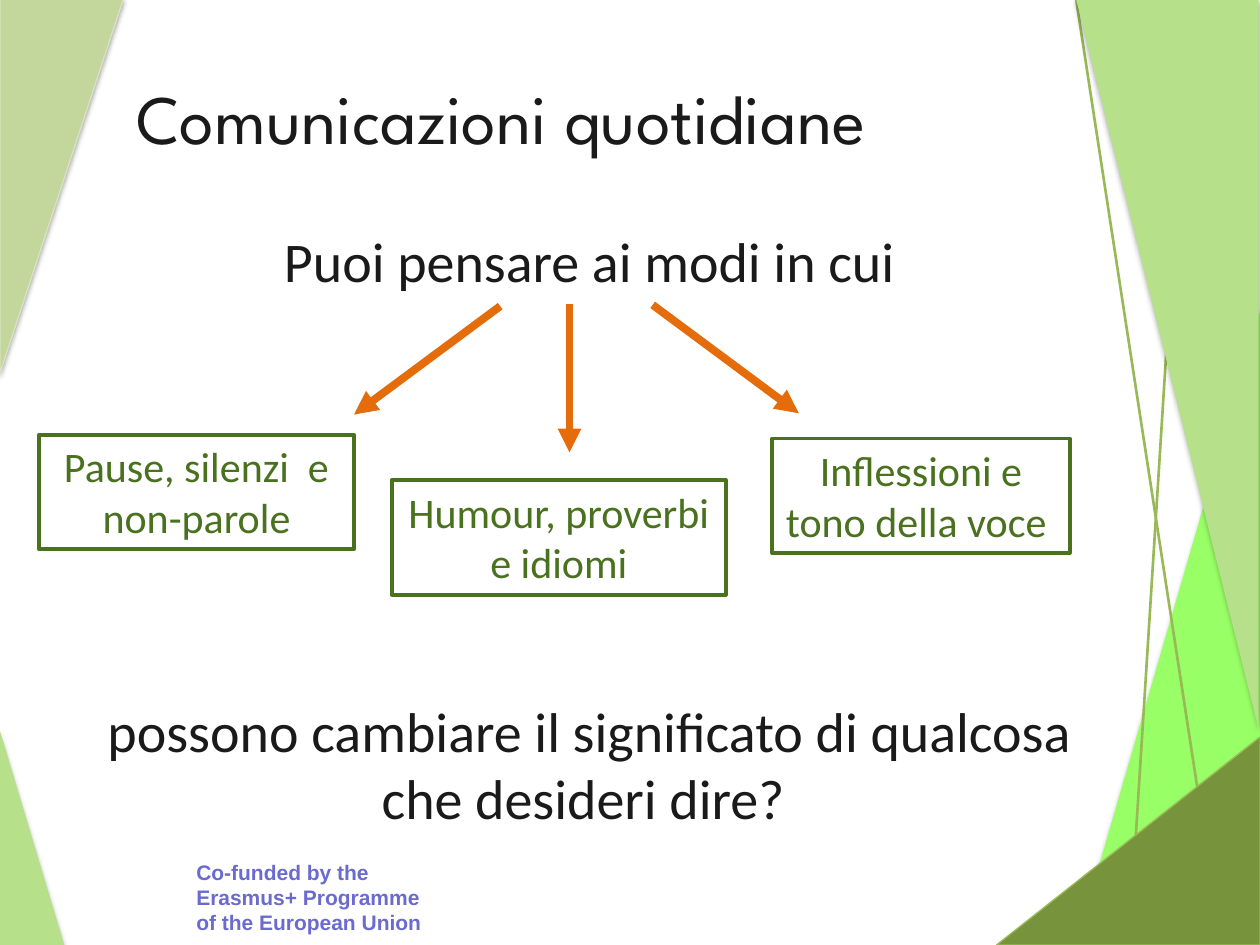
from lxml.etree import SubElement as Sub
from pptx import Presentation
from pptx.dml.color import RGBColor as RGB
from pptx.enum.shapes import MSO_CONNECTOR as Conn, MSO_SHAPE as Shape
from pptx.enum.text import MSO_ANCHOR as Anchor, PP_ALIGN as Align
from pptx.oxml.ns import qn
from pptx.util import Inches, Pt

WIDE, HIGH = 10, 7.5
HUES = {"ink": "1A1A1A", "moss": "49711E", "rust": "E46C0A", "lilac": "6B6BCF",
        "neon": "99FF66", "leaf": "B7E08B", "sage": "C3D69B", "pale": "D7E4BD",
        "olive": "77933C", "stem": "98B955"}

# Content: text, place (left, top, width, height)
TITLE = "Comunicazioni quotidiane", (0.74, 0.3, 6.47, 1.25)
BODY = ["Puoi pensare ai modi in cui",
        "possono cambiare il significato di qualcosa che desideri dire? "]
BODY_AT = 0.5, 1.75, 8.36, 4.95
BODY_GAP = 230
FUND = "Co-funded by the Erasmus+ Programme of the European Union", (1.46, 6.77, 2, 0.71)
WAYS = [("Pause, silenzi  e non-parole", (0.31, 3.45, 2.5)),
        ("Humour, proverbi e idiomi", (3.11, 3.81, 2.65)),
        ("Inflessioni e tono della voce ", (6.13, 3.48, 2.36))]
WAY_HIGH = 0.91
ARROWS = [((3.97, 2.43), (2.81, 3.29)),
          ((4.52, 2.41), (4.52, 3.59)),
          ((5.18, 2.42), (6.34, 3.28))]

# Backdrop: place, flips, fill, edge; stems run between the two layers
BACK = [((8.54, 2.41, 1.48, 5.09), "H", "neon", None),
        ((0, 5.8, 0.51, 1.7), "", "leaf", None),
        ((0, -0.01, 0.98, 2.97), "V", "sage", "pale")]
STEMS = [((8.96, 7.5), (9.3, 2.1)), ((9.65, 7.21), (8.54, -0.01))]
FRONT = [((8.54, -0.01, 1.45, 5.8), "HV", "leaf", None),
         ((7.91, 5.85, 2.09, 1.65), "H", "olive", "stem")]

deck = Presentation()
deck.slide_width, deck.slide_height = Inches(WIDE), Inches(HIGH)
slide = deck.slides.add_slide(deck.slide_layouts[6])
shapes = slide.shapes


def hue(name):
    return RGB.from_string(HUES[name])


def edge(line, name, width):
    line.color.rgb = hue(name)
    line.width = Pt(width)


def write(frame, texts, size, font, color, align=Align.CENTER, bold=False, gap=0):
    frame.word_wrap = True
    for i, text in enumerate(texts):
        para = frame.paragraphs[0] if i == 0 else frame.add_paragraph()
        para.alignment = align
        if i:
            para.space_before = Pt(gap)
        run = para.add_run()
        run.text = text
        run.font.size, run.font.name, run.font.bold = Pt(size), font, bold
        run.font.color.rgb = hue(color)


def label(place, *args, **opts):
    frame = shapes.add_textbox(*map(Inches, place)).text_frame
    write(frame, *args, **opts)
    return frame


def wedge(place, flips, fill, rim):
    item = shapes.add_shape(Shape.RIGHT_TRIANGLE, *map(Inches, place))
    for axis in flips:
        item.element.spPr.xfrm.set("flip" + axis, "1")
    item.fill.solid()
    item.fill.fore_color.rgb = hue(fill)
    if rim:
        edge(item.line, rim, 0.75)
    else:
        item.line.fill.background()
    # Soft shadow cast downwards
    glow = Sub(item.element.spPr, qn("a:effectLst"))
    cast = Sub(glow, qn("a:outerShdw"), blurRad=str(Pt(3.1)), dist=str(Pt(1.8)),
               dir="5400000", rotWithShape="0")
    tint = Sub(cast, qn("a:srgbClr"), val="000000")
    Sub(tint, qn("a:alpha"), val="35000")


def stroke(start, end, color, width, head=False):
    item = shapes.add_connector(Conn.STRAIGHT, *map(Inches, start + end))
    edge(item.line, color, width)
    if head:
        Sub(item.line._get_or_add_ln(), qn("a:tailEnd"), type="triangle")
    Sub(item.element.spPr, qn("a:effectLst"))


# Backdrop
for part in BACK:
    wedge(*part)
for start, end in STEMS:
    stroke(start, end, "stem", 1.5)
for part in FRONT:
    wedge(*part)

# Texts
text, place = FUND
label(place, [text], 12, "Arial", "lilac", align=Align.LEFT, bold=True)
text, place = TITLE
label(place, [text], 39.6, "League Spartan", "ink").vertical_anchor = Anchor.MIDDLE
label(BODY_AT, BODY, 32, "Calibri", "ink", gap=BODY_GAP)

# Arrows and boxes
for start, end in ARROWS:
    stroke(start, end, "rust", 4.5, head=True)
for text, place in WAYS:
    box = shapes.add_shape(Shape.RECTANGLE, *map(Inches, place + (WAY_HIGH,)))
    box.shadow.inherit = False
    box.fill.background()
    edge(box.line, "moss", 2.25)
    box.text_frame.vertical_anchor = Anchor.TOP
    write(box.text_frame, [text], 24, "Calibri", "moss")

deck.save("out.pptx")
